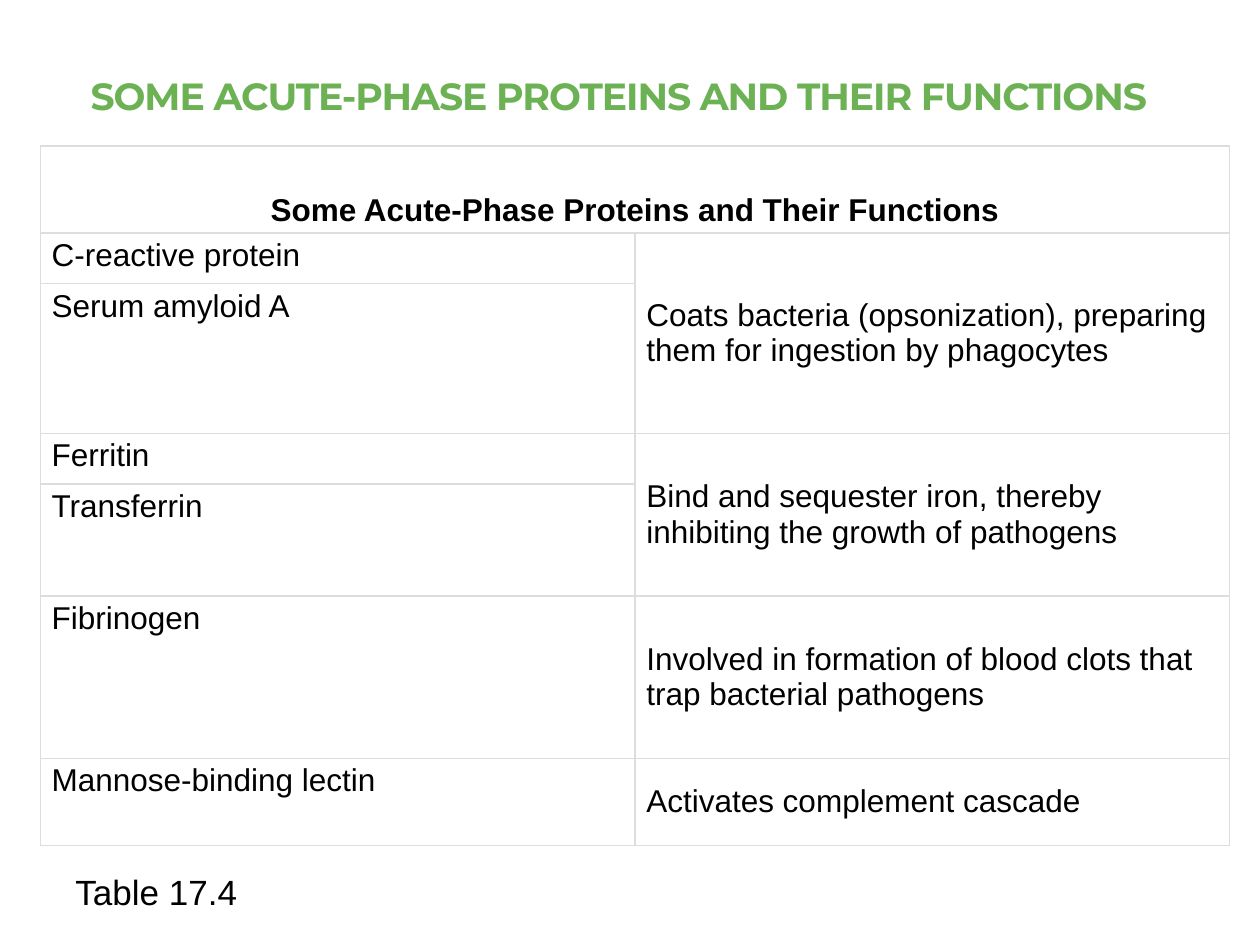
from lxml import etree
from pptx import Presentation
from pptx.dml.color import RGBColor
from pptx.enum.text import MSO_ANCHOR, PP_ALIGN
from pptx.oxml.ns import qn
from pptx.util import Inches, Pt

TOP, MID, LOW = MSO_ANCHOR.TOP, MSO_ANCHOR.MIDDLE, MSO_ANCHOR.BOTTOM
LEFT, CENTER = PP_ALIGN.LEFT, PP_ALIGN.CENTER
GREEN = RGBColor(0x6C, 0xB2, 0x55)
BLACK = RGBColor(0, 0, 0)
WHITE = RGBColor(0xFF, 0xFF, 0xFF)
GREY = RGBColor(0xDD, 0xDD, 0xDD)


def write(frame, text, align, color, **form):
    """Put one formatted line of text in a frame."""
    para = frame.paragraphs[0]
    para.alignment = align
    run = para.add_run()
    run.text = text
    run.font.color.rgb = color
    for key, value in form.items():
        setattr(run.font, key, value)
    return run


def border(cell):
    """Draw a thin grey line on all four sides of a cell."""
    props = cell._tc.get_or_add_tcPr()
    for spot, side in enumerate(("a:lnL", "a:lnR", "a:lnT", "a:lnB")):
        line = etree.Element(qn(side), w=str(Pt(1)))
        fill = etree.SubElement(line, qn("a:solidFill"))
        etree.SubElement(fill, qn("a:srgbClr"), val=str(GREY))
        props.insert(spot, line)


deck = Presentation()
deck.slide_width, deck.slide_height = Inches(10), Inches(7.5)
slide = deck.slides.add_slide(deck.slide_layouts[6])

# Title
box = slide.shapes.add_textbox(Inches(0.5), Inches(0.26), Inches(8.82), Inches(0.72))
title = box.text_frame
title.word_wrap = True
title.vertical_anchor = LOW
title.margin_bottom = Inches(0.04)
run = write(title, "SOME ACUTE-PHASE PROTEINS AND THEIR FUNCTIONS", CENTER, GREEN,
            name="Montserrat", size=Pt(21.6), bold=True)
run.font._element.set("spc", "-60")

# Table number
box = slide.shapes.add_textbox(Inches(0.5), Inches(6.83), Inches(8.82), Inches(0.41))
label = box.text_frame
label.word_wrap = True
label.margin_top = Inches(0.08)
label.paragraphs[0].space_after = Pt(6)
write(label, "Table 17.4", LEFT, BLACK, name="Arial", size=Pt(20))

# Table: an empty right cell joins the one above it
ROWS = [
    (0.69, "Some Acute-Phase Proteins and Their Functions", ""),
    (0.4, "C-reactive protein",
     "Coats bacteria (opsonization), preparing them for ingestion by phagocytes"),
    (1.19, "Serum amyloid A", ""),
    (0.4, "Ferritin",
     "Bind and sequester iron, thereby inhibiting the growth of pathogens"),
    (0.89, "Transferrin", ""),
    (1.29, "Fibrinogen",
     "Involved in formation of blood clots that trap bacterial pathogens"),
    (0.69, "Mannose-binding lectin", "Activates complement cascade"),
]
MARGINS = {"margin_left": 0.09, "margin_right": 0.09,
           "margin_top": 0.04, "margin_bottom": 0.04}
grid = slide.shapes.add_table(len(ROWS), 2, Inches(0.32), Inches(1.16),
                              Inches(9.44), Inches(5.54)).table
grid.horz_banding = False
grid.first_row = False
for col in grid.columns:
    col.width = Inches(4.72)

for r, (height, *texts) in enumerate(ROWS):
    grid.rows[r].height = Inches(height)
    head = r == 0
    for c, text in enumerate(texts):
        cell = grid.cell(r, c)
        cell.fill.solid()
        cell.fill.fore_color.rgb = WHITE
        border(cell)
        for key, value in MARGINS.items():
            setattr(cell, key, Inches(value))
        cell.vertical_anchor = LOW if head else (TOP, MID)[c]
        if text:
            write(cell.text_frame, text, CENTER if head else LEFT, BLACK,
                  name="Arial", size=Pt(18), bold=head)
        elif not head:
            grid.cell(r - 1, c).merge(cell)
grid.cell(0, 0).merge(grid.cell(0, 1))

deck.save("out.pptx")
